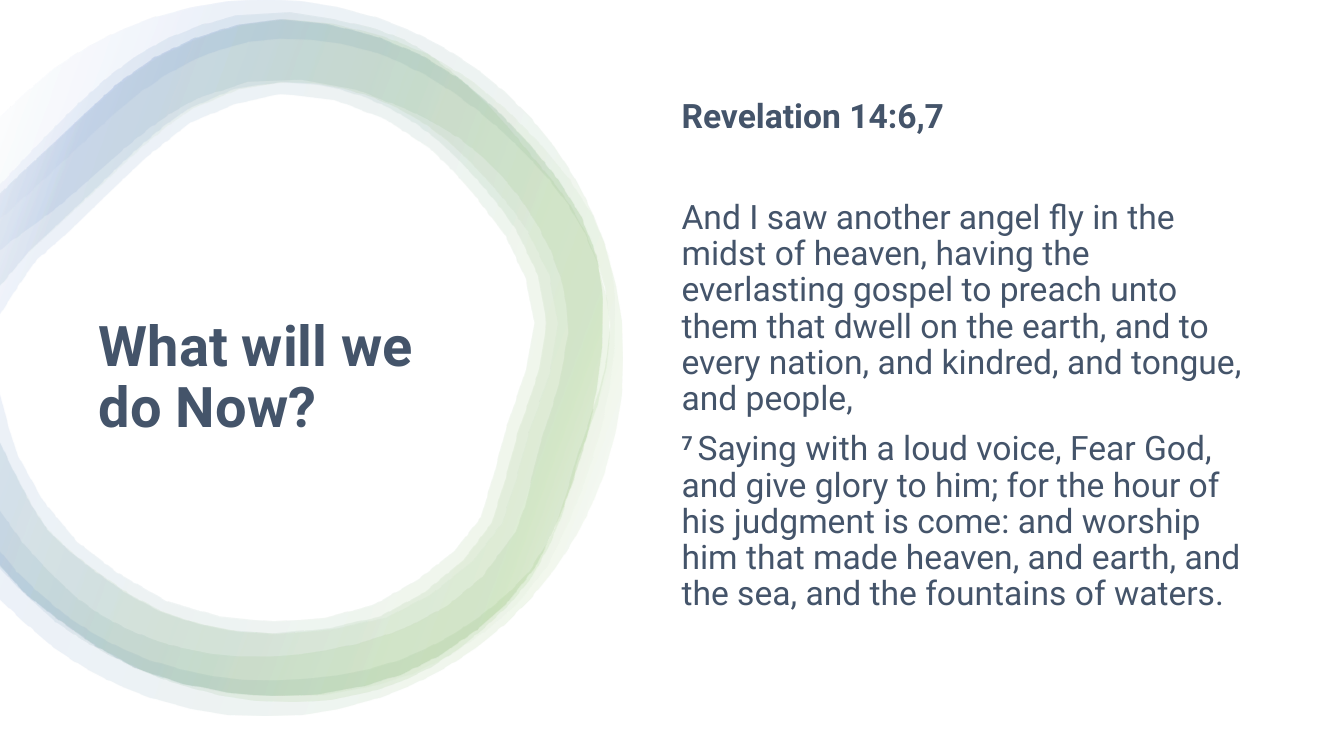
import collections
import math

import lxml.etree
import pptx
import pptx.dml.color
import pptx.enum.shapes
import pptx.enum.text
import pptx.oxml
import pptx.oxml.ns
import pptx.util

Inches = pptx.util.Inches
Pt = pptx.util.Pt
qn = pptx.oxml.ns.qn
Box = collections.namedtuple("Box", "left top width height")

WHITE, GREEN, BLUE, SLATE = "FFFFFF", "70AD47", "4472C4", "44546A"
FONT = "Roboto"
LONGEST_PIECE = 0.55  # inches of outline drawn as one straight piece

# Outlines run clockwise outside and back inside, in inches from the ring box
OUTER_WAVY = [
    (-.01, 1.85), (.49, 1.32), (1.08, .76), (1.65, .39), (2.33, .16), (2.87, .13),
    (3.72, .29), (4.26, .55), (4.83, 1.04), (5.25, 1.53), (5.65, 2.04), (5.93, 2.64),
    (6.04, 3.3), (5.93, 3.97), (5.73, 4.54), (5.56, 5.12), (5.26, 5.73), (4.81, 6.21),
    (4.27, 6.61), (3.65, 6.86), (2.91, 6.96), (2.17, 6.89), (1.7, 6.76), (1.1, 6.5),
    (.55, 6.16), (.19, 5.83), (-.01, 5.62)]
INNER_WAVY = [
    (-.01, 5.04), (.24, 5.39), (.75, 5.91), (1.24, 6.22), (1.8, 6.42), (2.38, 6.5),
    (2.96, 6.48), (3.52, 6.38), (4.06, 6.2), (4.43, 6), (4.77, 5.72), (5.1, 5.28),
    (5.2, 5.02), (5.34, 4.43), (5.53, 3.83), (5.63, 3.3), (5.55, 2.75), (5.32, 2.23),
    (4.98, 1.76), (4.54, 1.37), (4.03, 1.09), (3.52, .89), (2.98, .8), (2.45, .82),
    (1.96, .98), (1.49, 1.27), (1.04, 1.65), (.57, 2.06), (.08, 2.42), (-.01, 2.5)]
OUTER_PLAIN = [
    (-.01, 1.93), (.55, 1.4), (1.54, .56), (2.78, .19), (4.17, .54), (5.25, 1.43),
    (5.91, 2.53), (5.91, 3.87), (5.53, 5.15), (5.02, 5.98), (3.99, 6.68), (2.7, 6.9),
    (1.36, 6.63), (.26, 5.89), (-.01, 5.59)]
INNER_PLAIN = [
    (-.01, 4.35), (.33, 5.03), (.69, 5.46), (1.61, 6.07), (2.7, 6.28), (3.76, 6.11),
    (4.19, 5.88), (4.59, 5.55), (4.87, 5.18), (5.01, 4.73), (5.13, 4.28), (5.34, 3.66),
    (5.41, 3.2), (5.33, 2.73), (5.12, 2.29), (4.78, 1.84), (4.34, 1.39), (3.88, 1.08),
    (3.36, .88), (2.78, .81), (2.32, .88), (1.86, 1.08), (1.41, 1.43), (.98, 1.84),
    (.6, 2.2), (.29, 2.49), (-.01, 2.85)]
INNER_SMALL = [
    (-.01, 3.84), (.17, 4.49), (.43, 4.96), (.77, 5.37), (1.66, 5.96), (2.71, 6.16),
    (3.71, 5.99), (4.5, 5.46), (4.76, 5.13), (4.89, 4.7), (5.01, 4.25), (5.22, 3.62),
    (5.29, 3.2), (5.21, 2.77), (5.01, 2.34), (4.69, 1.92), (4.26, 1.47), (3.82, 1.18),
    (3.32, .99), (2.78, .93), (1.89, 1.21), (1.07, 1.92), (.69, 2.29), (.36, 2.58),
    (-.01, 3.14)]
OUTER_ROUND = [
    (2.62 + 3.55 * math.cos(math.radians(angle)), 3.55 + 3.55 * math.sin(math.radians(angle)))
    for angle in range(-138, 139, 12)]
INNER_ROUND = [
    (-.01, 5.45), (.16, 5.66), (.64, 6.09), (1.19, 6.42), (1.78, 6.63), (2.4, 6.73),
    (3.03, 6.72), (3.65, 6.63), (4.23, 6.42), (4.77, 6.09), (5.23, 5.67), (5.48, 5.27),
    (5.63, 4.8), (5.72, 4.49), (5.93, 3.86), (6.04, 3.23), (5.91, 2.6), (5.62, 2.03),
    (5.21, 1.54), (4.74, 1.11), (4.23, .76), (3.67, .51), (3.07, .4), (2.46, .42),
    (1.89, .61), (1.37, .93), (.89, 1.35), (.41, 1.8), (-.01, 2.18)]

# Each band: outer outline, inner outline, horizontal stretch, gradient stops
MIXED = [(2, WHITE), (16, GREEN), (85, BLUE), (100, WHITE)]
BANDS = [
    (OUTER_WAVY, INNER_WAVY, 1, [(37, GREEN), (85, BLUE), (100, WHITE)]),
    (OUTER_PLAIN, INNER_PLAIN, 1.02, [(2, WHITE), (54, GREEN), (100, WHITE)]),
    (OUTER_PLAIN, INNER_SMALL, 1, MIXED),
    (OUTER_PLAIN, INNER_PLAIN, 1, MIXED),
    (OUTER_ROUND, INNER_ROUND, 1, [(2, WHITE), (16, GREEN), (74, BLUE), (100, WHITE)]),
]

TITLE = "What will we do Now?"
# Each paragraph: space before, then runs of (text, format, baseline shift)
PASSAGE = [
    (10, [("Revelation 14:6,7", {"bold": True}, 0)]),
    (46, [("And I saw another angel fly in the midst of heaven, having the everlasting "
           "gospel to preach unto them that dwell on the earth, and to every nation, and "
           "kindred, and tongue, and people,", {"bold": False}, 0)]),
    (10, [("7 ", {"bold": True}, 30),
          ("Saying with a loud voice, Fear God, and give glory to him; for the hour of his "
           "judgment is come: and worship him that made heaven, and earth, and the sea, and "
           "the fountains of waters.", {"bold": False}, 0)]),
]


def color(value):
    return pptx.dml.color.RGBColor.from_string(value)


def apply(target, values):
    for name, value in values.items():
        setattr(target, name, value)


def smooth(knots):
    """Points of a smooth curve through the knots, more where they lie far apart."""
    padded = [knots[0], *knots, knots[-1]]
    points = []
    for before, start, end, after in zip(padded, padded[1:], padded[2:], padded[3:]):
        steps = math.ceil(math.dist(start, end) / LONGEST_PIECE)
        for step in range(steps):
            t = step / steps
            points.append(tuple(
                b + t * (c - a) / 2 + t * t * (2 * a - 5 * b + 4 * c - d) / 2
                + t ** 3 * (3 * b - a - 3 * c + d) / 2
                for a, b, c, d in zip(before, start, end, after)))
    return points + [knots[-1]]


def fill_gradient(shape, stops, angle=200, opacity=10):
    shape.fill.gradient()
    gradient = shape.element.spPr.find(qn("a:gradFill"))
    for child in list(gradient):
        gradient.remove(child)
    stop_list = lxml.etree.SubElement(gradient, qn("a:gsLst"))
    for position, value in stops:
        stop = lxml.etree.SubElement(stop_list, qn("a:gs"), pos=str(position * 1000))
        tint = lxml.etree.SubElement(stop, qn("a:srgbClr"), val=value)
        lxml.etree.SubElement(tint, qn("a:alpha"), val=str(opacity * 1000))
    lxml.etree.SubElement(gradient, qn("a:lin"), ang=str(angle * 60000), scaled="0")


def draw_backdrop(page, box):
    backdrop = page.shapes.add_shape(pptx.enum.shapes.MSO_SHAPE.RECTANGLE, *box)
    backdrop.shadow.inherit = False
    backdrop.fill.solid()
    backdrop.fill.fore_color.rgb = color(WHITE)
    backdrop.line.fill.background()


def draw_ring(page, box):
    ring = page.shapes.add_group_shape()
    for outer, inner, stretch, stops in BANDS:
        points = [(box.left + Inches(x * stretch), box.top + Inches(y))
                  for x, y in smooth(outer) + smooth(inner)]
        builder = ring.shapes.build_freeform(*points[0])
        builder.add_line_segments(points[1:], close=True)
        band = builder.convert_to_shape()
        band.shadow.inherit = False
        band.line.fill.background()
        fill_gradient(band, stops)


def write_text(holder, box, paragraphs, size, bottom_inset=0.05):
    apply(holder, box._asdict())
    holder.element.getparent().append(holder.element)  # in front of the ring
    frame = holder.text_frame
    apply(frame, {"word_wrap": True, "auto_size": pptx.enum.text.MSO_AUTO_SIZE.NONE,
                  "vertical_anchor": pptx.enum.text.MSO_ANCHOR.MIDDLE,
                  "margin_bottom": Inches(bottom_inset)})
    for index, (space, runs) in enumerate(paragraphs):
        para = frame.add_paragraph() if index else frame.paragraphs[0]
        apply(para, {"alignment": pptx.enum.text.PP_ALIGN.LEFT, "line_spacing": 0.9,
                     "space_before": Pt(space), "space_after": Pt(0)})
        # No bullet and no indent
        properties = para._p.get_or_add_pPr()
        properties.set("marL", "0")
        properties.set("indent", "0")
        lxml.etree.SubElement(properties, qn("a:buNone"))
        for text, values, shift in runs:
            span = para.add_run()
            span.text = text
            apply(span.font, {"name": FONT, "size": Pt(size), **values})
            span.font.color.rgb = color(SLATE)
            if shift:
                span._r.get_or_add_rPr().set("baseline", str(shift * 1000))


def build_scripture_slide(deck, box):
    page = deck.slides.add_slide(deck.slide_layouts[1])
    draw_backdrop(page, box)
    draw_ring(page, box)
    title_box = Box(box.left + Inches(0.88), box.top + Inches(2.25), Inches(4.01), Inches(3.02))
    write_text(page.shapes.title, title_box, [(0, [(TITLE, {"bold": True}, 0)])], 40)
    body_box = Box(box.left + Inches(6.66), box.top + Inches(0.88), Inches(5.8), Inches(5.72))
    write_text(page.placeholders[1], body_box, PASSAGE, 24, bottom_inset=0.46)


def main():
    deck = pptx.Presentation()
    apply(deck, {"slide_width": Inches(13.33), "slide_height": Inches(7.5)})
    build_scripture_slide(deck, Box(0, 0, deck.slide_width, deck.slide_height))
    deck.save("out.pptx")


if __name__ == "__main__":
    main()
